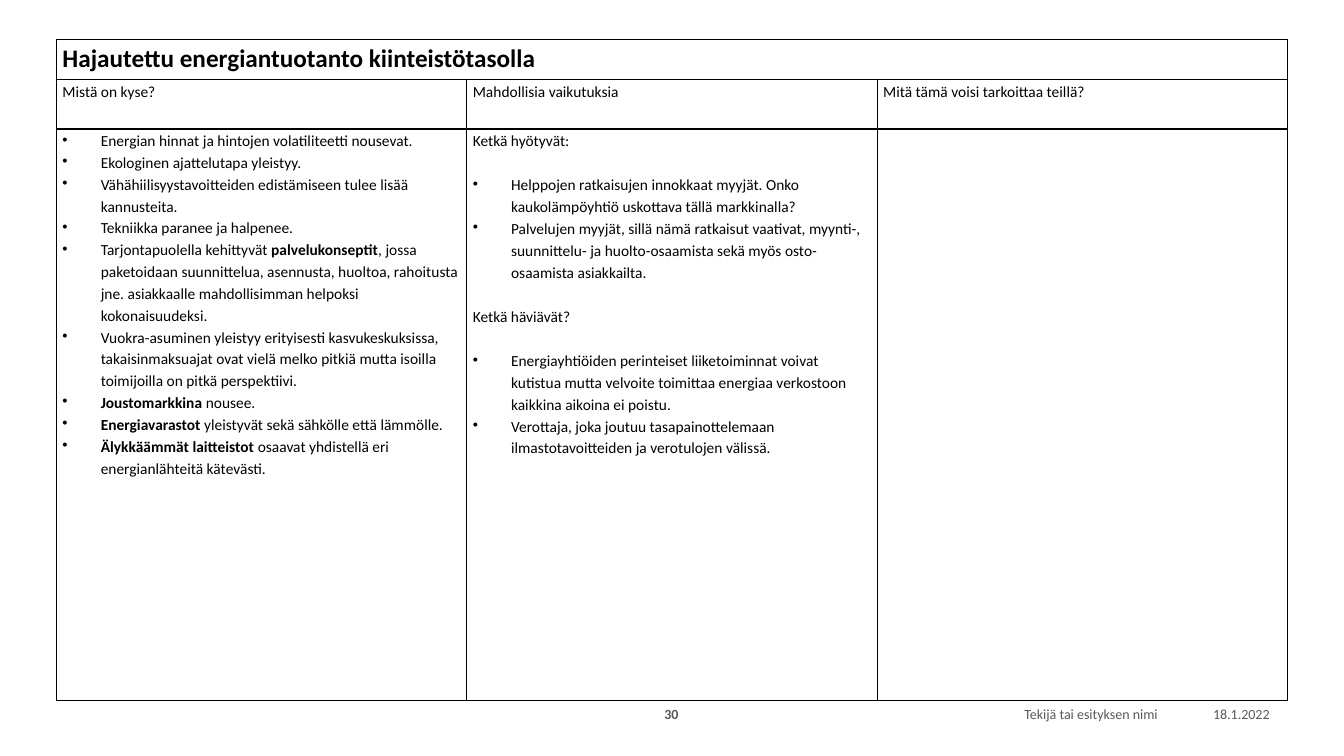
from lxml import etree
from pptx import Presentation
from pptx.dml.color import RGBColor
from pptx.enum import text
from pptx.oxml import ns
from pptx.util import Inches, Pt

FONT = "Calibri"
BLACK = "000000"
GREY = "595959"
INDENT = Inches(0.38)
ROW_HEIGHTS = (0.4, 0.49, 5.67)
COLUMN_WIDTH = 4.07

TITLE = "Hajautettu energiantuotanto kiinteistötasolla"
HEADINGS = ("Mistä on kyse?", "Mahdollisia vaikutuksia", "Mitä tämä voisi tarkoittaa teillä?")
TOPICS = (
    "Energian hinnat ja hintojen volatiliteetti nousevat.",
    "Ekologinen ajattelutapa yleistyy.",
    "Vähähiilisyystavoitteiden edistämiseen tulee lisää kannusteita.",
    "Tekniikka paranee ja halpenee.",
    "Tarjontapuolella kehittyvät **palvelukonseptit**, jossa paketoidaan suunnittelua, asennusta, "
    "huoltoa, rahoitusta jne. asiakkaalle mahdollisimman helpoksi kokonaisuudeksi.",
    "Vuokra-asuminen yleistyy erityisesti kasvukeskuksissa, takaisinmaksuajat ovat vielä melko "
    "pitkiä mutta isoilla toimijoilla on pitkä perspektiivi.",
    "**Joustomarkkina** nousee.",
    "**Energiavarastot** yleistyvät sekä sähkölle että lämmölle.",
    "**Älykkäämmät laitteistot** osaavat yhdistellä eri energianlähteitä kätevästi.",
)
IMPACTS = (
    ("Ketkä hyötyvät:", (
        "Helppojen ratkaisujen innokkaat myyjät. Onko kaukolämpöyhtiö uskottava tällä markkinalla?",
        "Palvelujen myyjät, sillä nämä ratkaisut vaativat, myynti-, suunnittelu- ja "
        "huolto-osaamista sekä myös osto-osaamista asiakkailta.",
    )),
    ("Ketkä häviävät?", (
        "Energiayhtiöiden perinteiset liiketoiminnat voivat kutistua mutta velvoite toimittaa "
        "energiaa verkostoon kaikkina aikoina ei poistu.",
        "Verottaja, joka joutuu tasapainottelemaan ilmastotavoitteiden ja verotulojen välissä.",
    )),
)


def color(value):
    return RGBColor.from_string(value)


def format_run(run, size, value, bold=False):
    run.font.name = FONT
    run.font.size = Pt(size)
    run.font.bold = bold
    run.font.color.rgb = color(value)


def add_bullet(paragraph):
    properties = paragraph._p.get_or_add_pPr()
    properties.set("marL", str(INDENT))
    properties.set("indent", str(-INDENT))
    etree.SubElement(properties, ns.qn("a:buChar"), char="•")


def add_paragraph(frame, content, size=11, bold=False, bullet=False, before=0, after=0):
    first = not frame.text
    paragraph = frame.paragraphs[0] if first else frame.add_paragraph()
    if bullet:
        add_bullet(paragraph)
    paragraph.line_spacing = 1.15
    paragraph.space_before = Pt(0 if first else before)
    paragraph.space_after = Pt(after)
    for index, part in enumerate(content.split("**")):
        if part:
            run = paragraph.add_run()
            run.text = part
            format_run(run, size, BLACK, bold or index % 2 == 1)


def format_cell(cell):
    cell.margin_left = cell.margin_right = Inches(0.06)
    cell.margin_top = cell.margin_bottom = 0
    properties = cell._tc.get_or_add_tcPr()
    for side in ("lnL", "lnR", "lnT", "lnB"):
        line = etree.SubElement(properties, ns.qn(f"a:{side}"), w=str(Pt(1)))
        fill = etree.SubElement(line, ns.qn("a:solidFill"))
        etree.SubElement(fill, ns.qn("a:srgbClr"), val=BLACK)
    cell.fill.background()


def add_grid(slide):
    frame = slide.shapes.add_table(
        len(ROW_HEIGHTS), len(HEADINGS), Inches(0.56), Inches(0.39),
        Inches(COLUMN_WIDTH * len(HEADINGS)), Inches(sum(ROW_HEIGHTS)))
    table = frame.table
    table.first_row = table.horz_banding = False
    for column in table.columns:
        column.width = Inches(COLUMN_WIDTH)
    for row, height in zip(table.rows, ROW_HEIGHTS):
        row.height = Inches(height)
        for cell in row.cells:
            format_cell(cell)
    table.cell(0, 0).merge(table.cell(0, len(HEADINGS) - 1))
    return table


def add_footer(slide, content, left, width, alignment, bold=False):
    box = slide.shapes.add_textbox(Inches(left), Inches(6.95), Inches(width), Inches(0.27))
    frame = box.text_frame
    frame.word_wrap = True
    frame.vertical_anchor = text.MSO_ANCHOR.MIDDLE
    frame.text = content
    paragraph = frame.paragraphs[0]
    paragraph.alignment = alignment
    format_run(paragraph.runs[0], 10, GREY, bold)


def main():
    presentation = Presentation()
    presentation.slide_width = Inches(13.33)
    presentation.slide_height = Inches(7.5)
    slide = presentation.slides.add_slide(presentation.slide_layouts[6])

    add_footer(slide, "18.1.2022", 11.58, 1.11, text.PP_ALIGN.RIGHT)
    add_footer(slide, "Tekijä tai esityksen nimi", 7.41, 4.17, text.PP_ALIGN.RIGHT)
    add_footer(slide, "30", 6.36, 0.6, text.PP_ALIGN.CENTER, bold=True)

    table = add_grid(slide)
    add_paragraph(table.cell(0, 0).text_frame, TITLE, size=18, bold=True)
    for column, heading in enumerate(HEADINGS):
        add_paragraph(table.cell(1, column).text_frame, heading, after=10)
    for topic in TOPICS:
        add_paragraph(table.cell(2, 0).text_frame, topic, bullet=True)
    impacts = table.cell(2, 1).text_frame
    for question, answers in IMPACTS:
        add_paragraph(impacts, question, before=16, after=10)
        for index, answer in enumerate(answers):
            add_paragraph(impacts, answer, bullet=True, before=0 if index else 6)

    presentation.save("out.pptx")


if __name__ == "__main__":
    main()
